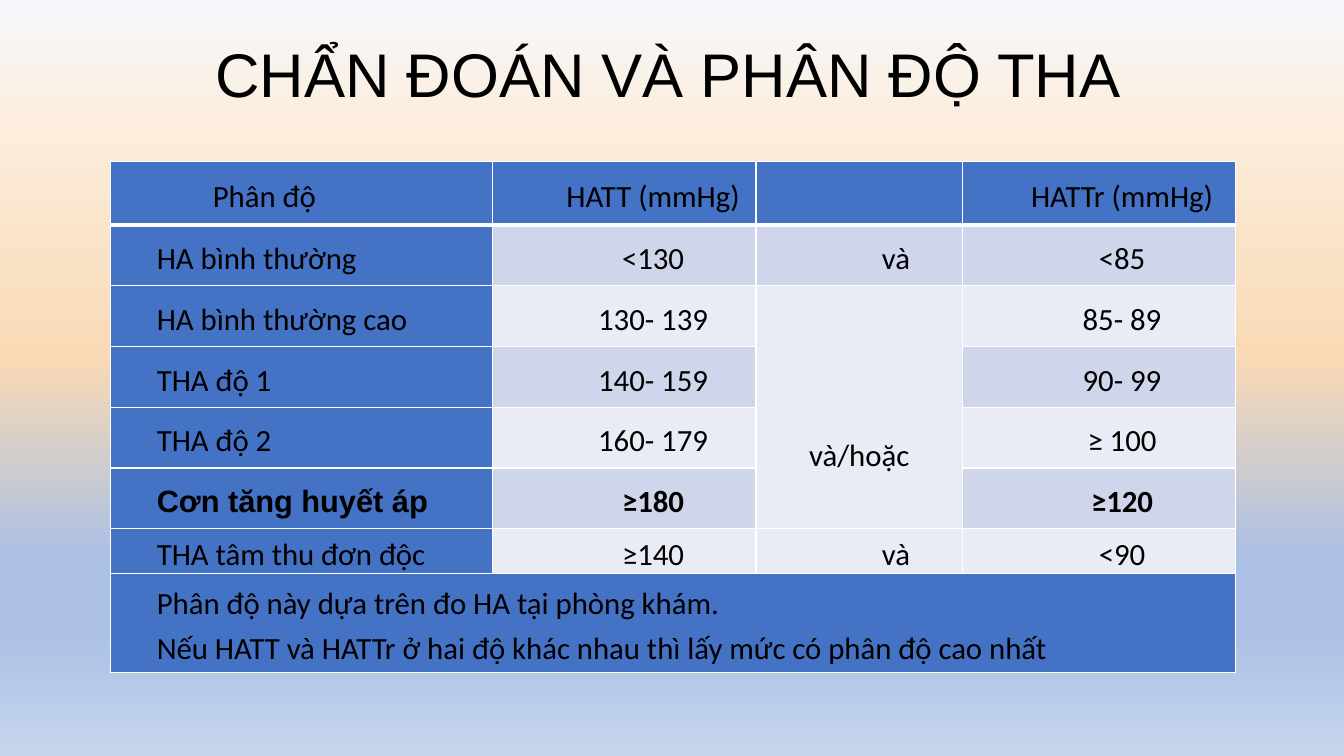
"""Build a slide with a table that grades blood pressure."""
from dataclasses import dataclass

from lxml import etree
from pptx import Presentation
from pptx.dml.color import RGBColor
from pptx.enum import text
from pptx.oxml.ns import qn
from pptx.util import Pt

BLUE, DARK_BAND, LIGHT_BAND = "4472C4", "CFD5EA", "E9EBF5"
BLACK, WHITE = "000000", "FFFFFF"
BACKGROUND_STOPS = [(0, "F6F8FC"), (17, "FCEDDC"), (34, "FAE2C6"), (47, "F9DAB5"),
                    (74, "ABC0E4"), (83, "ABC0E4"), (100, "C7D5ED")]
FIRST_LINE_INDENT = 28
HEADER_ROW, CRISIS_ROW, NOTE_ROW = 0, 5, 7
SHARED_ROW, SHARED_COLUMN = 2, 2


@dataclass(frozen=True)
class Column:
    """Width, left margin and alignment of one table column."""
    width: float
    margin: float
    align: text.PP_ALIGN


LEFT, CENTER = text.PP_ALIGN.LEFT, text.PP_ALIGN.CENTER
COLUMNS = [Column(273, 5, LEFT), Column(188, 13, CENTER),
           Column(147.5, 24.5, CENTER), Column(195, 5, CENTER)]
ROW_HEIGHTS = [45.2, 43.4, 43.4, 43.4, 43.4, 43.4, 30.5, 70.3]
ROWS = [
    ("Phân độ", "HATT (mmHg)", "", "HATTr (mmHg)"),
    ("HA bình thường", "<130", "và", "<85"),
    ("HA bình thường cao", "130- 139", "và/hoặc", "85- 89"),
    ("THA độ 1", "140- 159", "", "90- 99"),
    ("THA độ 2", "160- 179", "", "≥ 100"),
    ("Cơn tăng huyết áp", "≥180", "", "≥120"),
    ("THA tâm thu đơn độc", "≥140", "và", "<90"),
    ("Phân độ này dựa trên đo HA tại phòng khám.\n"
     "Nếu HATT và HATTr ở hai độ khác nhau thì lấy mức có phân độ cao nhất", "", "", ""),
]


def color(value: str) -> RGBColor:
    """Turn a hex string into a colour."""
    return RGBColor.from_string(value)


def style_font(font, name: str, size: float, bold: bool = False) -> None:
    """Set a black font."""
    font.name, font.size, font.bold = name, Pt(size), bold
    font.color.rgb = color(BLACK)


def paint_background(page) -> None:
    """Fill the page with a gradient from top to bottom."""
    fill = page.background.fill
    fill.gradient()
    fill.gradient_angle = 270
    stops = page.element.find(".//" + qn("a:gsLst"))
    for stop in list(stops):
        stops.remove(stop)
    for position, value in BACKGROUND_STOPS:
        stop = etree.SubElement(stops, qn("a:gs"), pos=str(position * 1000))
        etree.SubElement(stop, qn("a:srgbClr"), val=value)


def add_title(page) -> None:
    """Place and format the title."""
    title = page.shapes.title
    title.left, title.top, title.width, title.height = Pt(120), Pt(12), Pt(715), Pt(87)
    frame = title.text_frame
    frame.text = "CHẨN ĐOÁN VÀ PHÂN ĐỘ THA"
    frame.vertical_anchor = text.MSO_ANCHOR.MIDDLE
    para = frame.paragraphs[0]
    para.alignment, para.line_spacing = CENTER, 0.9
    style_font(para.font, "Arial", 44)


def add_borders(cell, row: int) -> None:
    """Draw white borders, with a thick one below the header."""
    properties = cell._tc.get_or_add_tcPr()
    widths = {"L": 1, "R": 1, "T": 3 if row == HEADER_ROW + 1 else 1,
              "B": 3 if row == HEADER_ROW else 1}
    for side, width in widths.items():
        line = etree.SubElement(properties, qn(f"a:ln{side}"), w=str(Pt(width)))
        fill = etree.SubElement(line, qn("a:solidFill"))
        etree.SubElement(fill, qn("a:srgbClr"), val=WHITE)


def cell_fill(row: int, column: int) -> str:
    """Choose the fill: blue for header, labels and note, else banded."""
    if row in (HEADER_ROW, NOTE_ROW) or column == 0:
        return BLUE
    return DARK_BAND if row % 2 else LIGHT_BAND


def fill_cell(cell, row: int, column: int) -> None:
    """Write and format one table cell."""
    add_borders(cell, row)
    cell.fill.solid()
    cell.fill.fore_color.rgb = color(cell_fill(row, column))
    cell.margin_left = cell.margin_right = cell.margin_top = cell.margin_bottom = 0
    cell.vertical_anchor = text.MSO_ANCHOR.MIDDLE
    cell.text = ROWS[row][column]
    margin, align = COLUMNS[column].margin, COLUMNS[column].align
    if (row, column) == (HEADER_ROW, 0):
        margin = 45
    if (row, column) == (SHARED_ROW, SHARED_COLUMN):
        margin, align = 10, LEFT
        cell.margin_top = Pt(64)
    bold = row == CRISIS_ROW
    for para in cell.text_frame.paragraphs:
        para.alignment, para.line_spacing = align, 1.2
        indents = para._p.get_or_add_pPr()
        indents.set("marL", str(Pt(margin)))
        indents.set("indent", str(Pt(FIRST_LINE_INDENT)))
        style_font(para.font, "Arial" if bold and column == 0 else "Calibri", 22, bold)


def add_grades(page) -> None:
    """Add the table of grades."""
    width = sum(column.width for column in COLUMNS)
    table = page.shapes.add_table(len(ROWS), len(COLUMNS), Pt(79), Pt(115.5),
                                  Pt(width), Pt(sum(ROW_HEIGHTS))).table
    for target, column in zip(table.columns, COLUMNS):
        target.width = Pt(column.width)
    for target, height in zip(table.rows, ROW_HEIGHTS):
        target.height = Pt(height)
    for row in range(len(ROWS)):
        for column in range(len(COLUMNS)):
            fill_cell(table.cell(row, column), row, column)
    table.cell(SHARED_ROW, SHARED_COLUMN).merge(table.cell(CRISIS_ROW, SHARED_COLUMN))
    table.cell(NOTE_ROW, 0).merge(table.cell(NOTE_ROW, len(COLUMNS) - 1))


def main() -> None:
    """Build and save the deck."""
    deck = Presentation()
    deck.slide_width, deck.slide_height = Pt(960), Pt(540)
    page = deck.slides.add_slide(deck.slide_layouts[5])
    paint_background(page)
    add_title(page)
    add_grades(page)
    deck.save("out.pptx")


if __name__ == "__main__":
    main()
